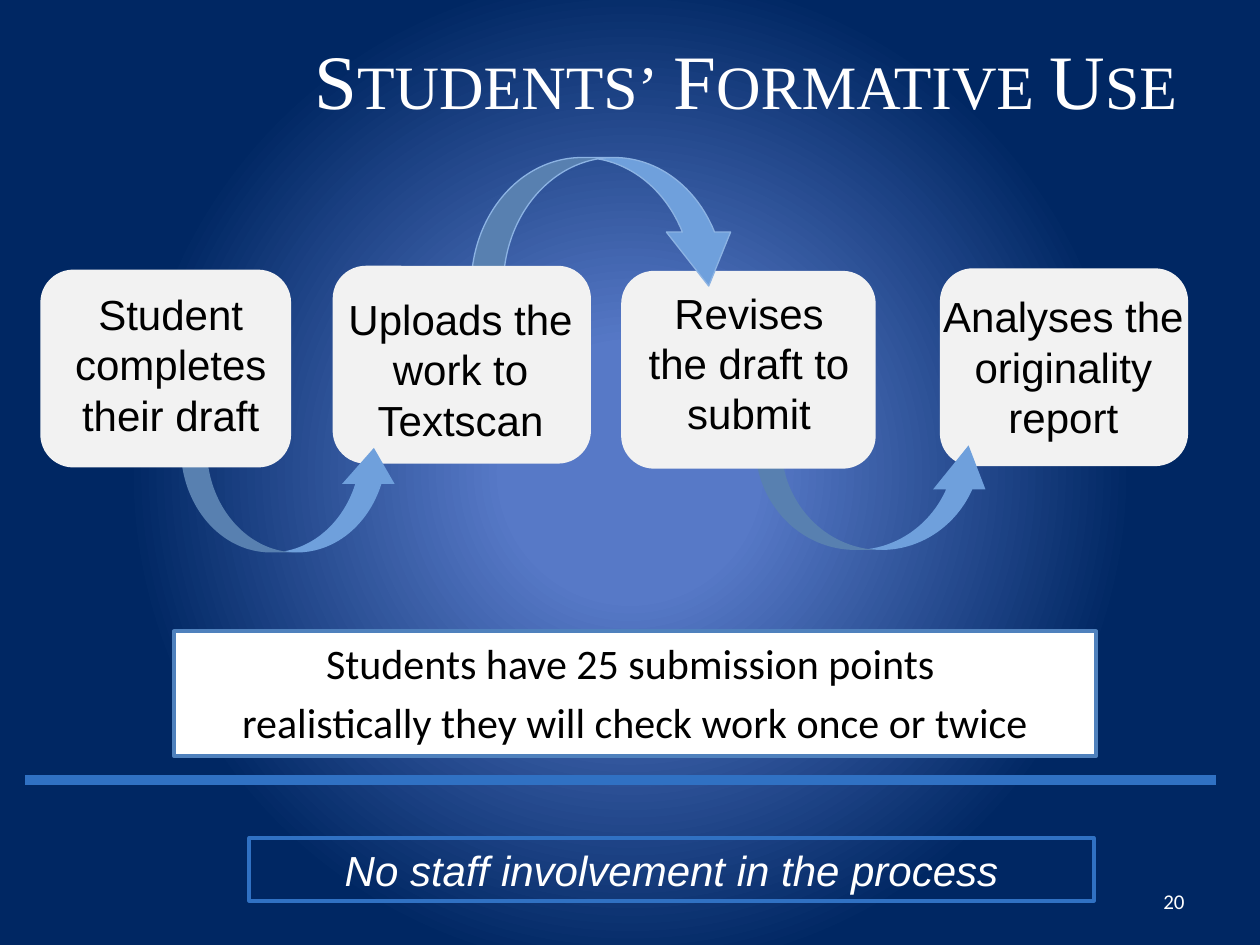
import pptx
import pptx.util
import pptx.oxml
import pptx.oxml.ns
from pptx.dml.color import RGBColor
from pptx.enum.shapes import MSO_CONNECTOR, MSO_SHAPE
from pptx.enum.text import MSO_ANCHOR, PP_ALIGN
from lxml import etree

WHITE = RGBColor(0xFF, 0xFF, 0xFF)
BLACK = RGBColor(0, 0, 0)
CARD = RGBColor(0xF2, 0xF2, 0xF2)
ARROW = RGBColor(0x6F, 0xA0, 0xDC)
ARROW_EDGE = RGBColor(0x8C, 0xB3, 0xE3)
RULE = RGBColor(0x30, 0x71, 0xC3)
NOTE_EDGE = RGBColor(0x4F, 0x81, 0xBD)
GLOW = RGBColor(0x57, 0x79, 0xC7)
NAVY = RGBColor(0x00, 0x27, 0x63)

TITLE = "Students’ Formative Use"
CARD_H = 1.57
TEXT_H = 1.31
STEPS = [
    {"text": "Student completes their draft", "card": (0.32, 2.14, 1.99), "label": (0.41, 2.24, 1.89)},
    {"text": "Uploads the work to Textscan", "card": (2.64, 2.11, 2.05), "label": (2.63, 2.28, 2.05)},
    {"text": "Revises the draft to submit", "card": (4.93, 2.15, 2.02), "label": (5.01, 2.23, 1.87)},
    {"text": "Analyses the originality report", "card": (7.46, 2.13, 1.97), "label": (7.26, 2.26, 2.36)},
]
ARROWS = [
    {"at": (1.89, 3.1, 0.83, 1.74), "head": 0.343, "below": True},
    {"at": (4.3, 0.69, 1.02, 2.14), "head": 0.42, "below": False},
    {"at": (6.53, 3, 0.83, 1.9), "head": 0.42, "below": True},
]
NOTE = ["Students have 25 submission points ", "realistically they will check work once or twice"]
FOOTNOTE = "No staff involvement in the process"
PAGE = "20"
GLOW_STOPS = [(0, GLOW), (16, GLOW), (64, NAVY), (100, NAVY)]


def inches(values):
    return [pptx.util.Inches(v) for v in values]


def write(shape, lines, size, font, color, align=PP_ALIGN.CENTER, italic=None):
    tf = shape.text_frame
    tf.word_wrap = True
    tf.text = "\n".join(lines)
    for p in tf.paragraphs:
        p.alignment = align
        for r in p.runs:
            r.font.size = pptx.util.Pt(size)
            r.font.name = font
            r.font.color.rgb = color
            r.font.italic = italic
    return tf


def add_shape(s, kind, at, fill=None, line=None, width=1):
    sp = s.shapes.add_shape(kind, *inches(at))
    sp.shadow.inherit = False
    if fill is None:
        sp.fill.background()
    else:
        sp.fill.solid()
        sp.fill.fore_color.rgb = fill
    if line is None:
        sp.line.fill.background()
    else:
        sp.line.color.rgb = line
        sp.line.width = pptx.util.Pt(width)
    return sp


def add_step(s, step):
    card = add_shape(s, MSO_SHAPE.ROUNDED_RECTANGLE, (*step["card"], CARD_H), CARD)
    card.adjustments[0] = 0.167
    label = s.shapes.add_textbox(*inches((*step["label"], TEXT_H)))
    write(label, [step["text"]], 24, "Arial", BLACK)


def add_arrow(s, arrow):
    edge = None if arrow["below"] else ARROW_EDGE
    sp = add_shape(s, MSO_SHAPE.CURVED_LEFT_ARROW, arrow["at"], ARROW, edge, 0.75)
    for i, value in enumerate((0.25, 0.5, arrow["head"])):
        sp.adjustments[i] = value
    sp.rotation = 270
    if arrow["below"]:
        sp._element.spPr.xfrm.set("flipH", "1")


def add_background(s):
    stops = "".join(
        f'<a:gs pos="{pos * 1000}"><a:srgbClr val="{color}"/></a:gs>' for pos, color in GLOW_STOPS
    )
    bg = pptx.oxml.parse_xml(
        f'<p:bg {pptx.oxml.ns.nsdecls("p", "a")}><p:bgPr><a:gradFill rotWithShape="1">'
        f'<a:gsLst>{stops}</a:gsLst><a:path path="circle">'
        '<a:fillToRect l="50000" t="50000" r="50000" b="50000"/></a:path>'
        '</a:gradFill><a:effectLst/></p:bgPr></p:bg>'
    )
    s._element.cSld.insert(0, bg)


def main():
    prs = pptx.Presentation()
    prs.slide_width, prs.slide_height = inches((10, 7.5))
    s = prs.slides.add_slide(prs.slide_layouts[5])
    add_background(s)

    title = s.shapes.title
    title.left, title.top, title.width, title.height = inches((0.44, 0, 9, 1.25))
    tf = write(title, [TITLE], 44, "Times New Roman", WHITE, PP_ALIGN.RIGHT)
    tf.vertical_anchor = MSO_ANCHOR.MIDDLE
    tf.paragraphs[0].runs[0].font._element.set("cap", "small")

    for i in reversed(range(len(STEPS))):
        add_step(s, STEPS[i])
        if i > 0:
            add_arrow(s, ARROWS[i - 1])

    note = add_shape(s, MSO_SHAPE.RECTANGLE, (1.38, 5.01, 7.32, 0.99), WHITE, NOTE_EDGE, 2)
    tf = write(note, NOTE, 24, "Calibri", BLACK)
    tf.vertical_anchor = MSO_ANCHOR.TOP
    tf.paragraphs[1].space_before = pptx.util.Pt(4.8)

    rule = s.shapes.add_connector(MSO_CONNECTOR.STRAIGHT, *inches((9.65, 6.19, 0.2, 6.19)))
    rule.line.color.rgb = RULE
    rule.line.width = pptx.util.Pt(6)
    etree.SubElement(rule._element.spPr, pptx.oxml.ns.qn("a:effectLst"))

    footnote = add_shape(s, MSO_SHAPE.RECTANGLE, (1.98, 6.65, 6.7, 0.5), None, RULE, 2.25)
    tf = write(footnote, [FOOTNOTE], 24, "Arial", WHITE, italic=True)
    tf.vertical_anchor = MSO_ANCHOR.TOP

    page = s.shapes.add_textbox(*inches((7.17, 6.95, 2.33, 0.4)))
    tf = write(page, [PAGE], 12, "Calibri", WHITE, PP_ALIGN.RIGHT)
    tf.vertical_anchor = MSO_ANCHOR.MIDDLE

    prs.save("out.pptx")


if __name__ == "__main__":
    main()
